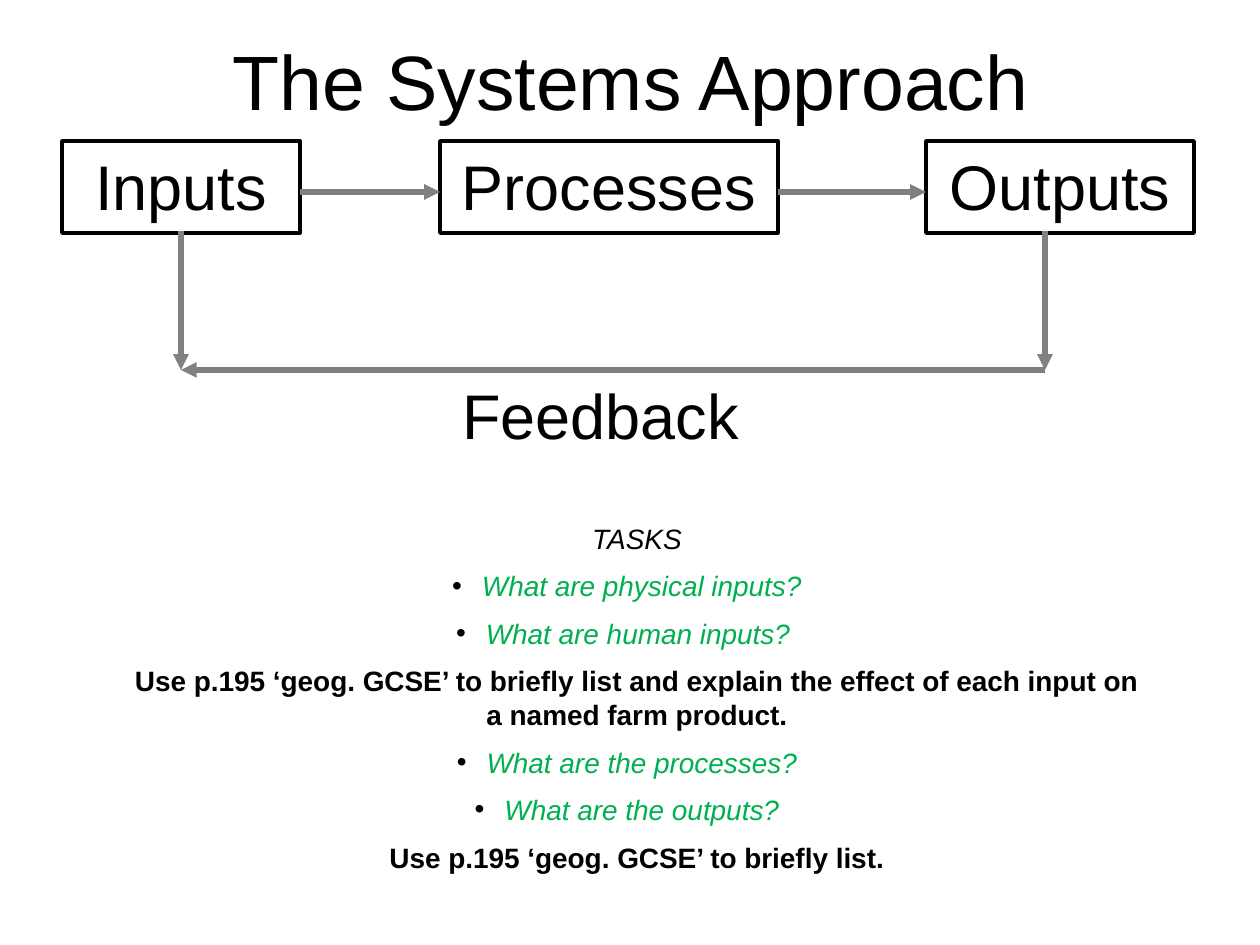
from dataclasses import dataclass

from lxml.etree import SubElement
from pptx import Presentation
from pptx.dml.color import RGBColor
from pptx.enum.shapes import MSO_CONNECTOR, MSO_SHAPE
from pptx.enum.text import MSO_ANCHOR, PP_ALIGN
from pptx.oxml.ns import qn
from pptx.util import Emu, Pt


@dataclass(frozen=True)
class Theme:
    """Colours, font and type sizes of the slide."""
    font: str = "Arial"
    ink: RGBColor = RGBColor(0, 0, 0)
    arrow: RGBColor = RGBColor(0x80, 0x80, 0x80)
    question: RGBColor = RGBColor(0, 0xB0, 0x50)
    title_size: int = 44
    stage_size: int = 36
    task_size: int = 16


THEME = Theme()

STAGES = [("Inputs", 0, 238), ("Processes", 378, 338), ("Outputs", 864, 268)]

TASKS = [
    ("TASKS", "heading"),
    ("What are physical inputs?", "question"),
    ("What are human inputs? ", "question"),
    ("Use p.195 ‘geog. GCSE’ to briefly list and explain the effect of each "
     "input on a named farm product.", "instruction"),
    ("What are the processes?", "question"),
    ("What are the outputs?", "question"),
    ("Use p.195 ‘geog. GCSE’ to briefly list.", "instruction"),
]


def px(length):
    """Turn px into EMU at 126 px to the inch."""
    return Emu(round(length * 914400 / 126))


def write(paragraph, wording, size, color=THEME.ink, align=PP_ALIGN.CENTER,
          before=0, bold=False, italic=False):
    """Add one styled run to a paragraph and set its spacing."""
    paragraph.alignment = align
    paragraph.space_before = Pt(before)
    run = paragraph.add_run()
    run.text = wording
    run.font.name = THEME.font
    run.font.size = Pt(size)
    run.font.color.rgb = color
    run.font.bold = bold
    run.font.italic = italic


def add_bullet(paragraph):
    """Give a paragraph a round bullet in the ink colour."""
    properties = paragraph._p.get_or_add_pPr()
    color = SubElement(properties, qn("a:buClr"))
    SubElement(color, qn("a:srgbClr"), val=str(THEME.ink))
    SubElement(properties, qn("a:buFont"), typeface=THEME.font)
    SubElement(properties, qn("a:buChar"), char="•")


def add_text_frame(slide, left, top, width, height):
    """Add a wrapping text box and return its text frame."""
    frame = slide.shapes.add_textbox(
        px(left), px(top), px(width), px(height)).text_frame
    frame.word_wrap = True
    return frame


def add_arrow(slide, start, end):
    """Draw a grey arrow between two points."""
    arrow = slide.shapes.add_connector(
        MSO_CONNECTOR.STRAIGHT, *map(px, start + end))
    arrow.line.color.rgb = THEME.arrow
    arrow.line.width = Pt(3)
    SubElement(arrow.line._get_or_add_ln(), qn("a:tailEnd"), type="triangle")
    SubElement(arrow._element.spPr, qn("a:effectLst"))


def add_title(slide, left, top, width, height):
    """Place the centred slide title."""
    frame = add_text_frame(slide, left, top, width, height)
    frame.vertical_anchor = MSO_ANCHOR.MIDDLE
    write(frame.paragraphs[0], "The Systems Approach", THEME.title_size)


def add_stage(slide, label, left, top, width, height):
    """Place one outlined stage of the system."""
    stage = slide.shapes.add_shape(
        MSO_SHAPE.RECTANGLE, px(left), px(top), px(width), px(height))
    stage.shadow.inherit = False
    stage.fill.background()
    stage.line.color.rgb = THEME.ink
    stage.line.width = Pt(2)
    stage.text_frame.vertical_anchor = MSO_ANCHOR.TOP
    write(stage.text_frame.paragraphs[0], label, THEME.stage_size, before=18)


def add_system(slide, left, top, width, height):
    """Place the stages, the flow between them and the feedback loop."""
    stage_height = 92
    flow = top + 51
    loop_top, loop_bottom = top + 90, top + 229
    loop_left, loop_right = left + 119, left + width - 149
    for label, offset, stage_width in STAGES:
        add_stage(slide, label, left + offset, top, stage_width, stage_height)
    for (_, offset, stage_width), (_, following, _) in zip(STAGES, STAGES[1:]):
        add_arrow(slide, (left + offset + stage_width, flow),
                  (left + following, flow))
    for x in (loop_right, loop_left):
        add_arrow(slide, (x, loop_top), (x, loop_bottom))
    add_arrow(slide, (loop_right, loop_bottom), (loop_left, loop_bottom))
    feedback = add_text_frame(
        slide, left + 388, loop_bottom, 338, top + height - loop_bottom)
    write(feedback.paragraphs[0], "Feedback", THEME.stage_size,
          align=PP_ALIGN.LEFT, before=18)


def add_tasks(slide, left, top, width, height):
    """Place the list of questions and instructions."""
    frame = add_text_frame(slide, left, top, width, height)
    for index, (wording, role) in enumerate(TASKS):
        paragraph = frame.add_paragraph() if index else frame.paragraphs[0]
        is_question = role == "question"
        write(paragraph, wording, THEME.task_size,
              THEME.question if is_question else THEME.ink, before=8,
              bold=role == "instruction", italic=role != "instruction")
        if is_question:
            add_bullet(paragraph)


def main():
    """Build the slide and save it."""
    deck = Presentation()
    deck.slide_width, deck.slide_height = px(1260), px(945)
    slide = deck.slides.add_slide(deck.slide_layouts[6])
    add_title(slide, 64, 1, 1134, 158)
    add_system(slide, 62, 141, 1132, 317)
    add_tasks(slide, 116, 515, 1042, 444)
    deck.save("out.pptx")


if __name__ == "__main__":
    main()
